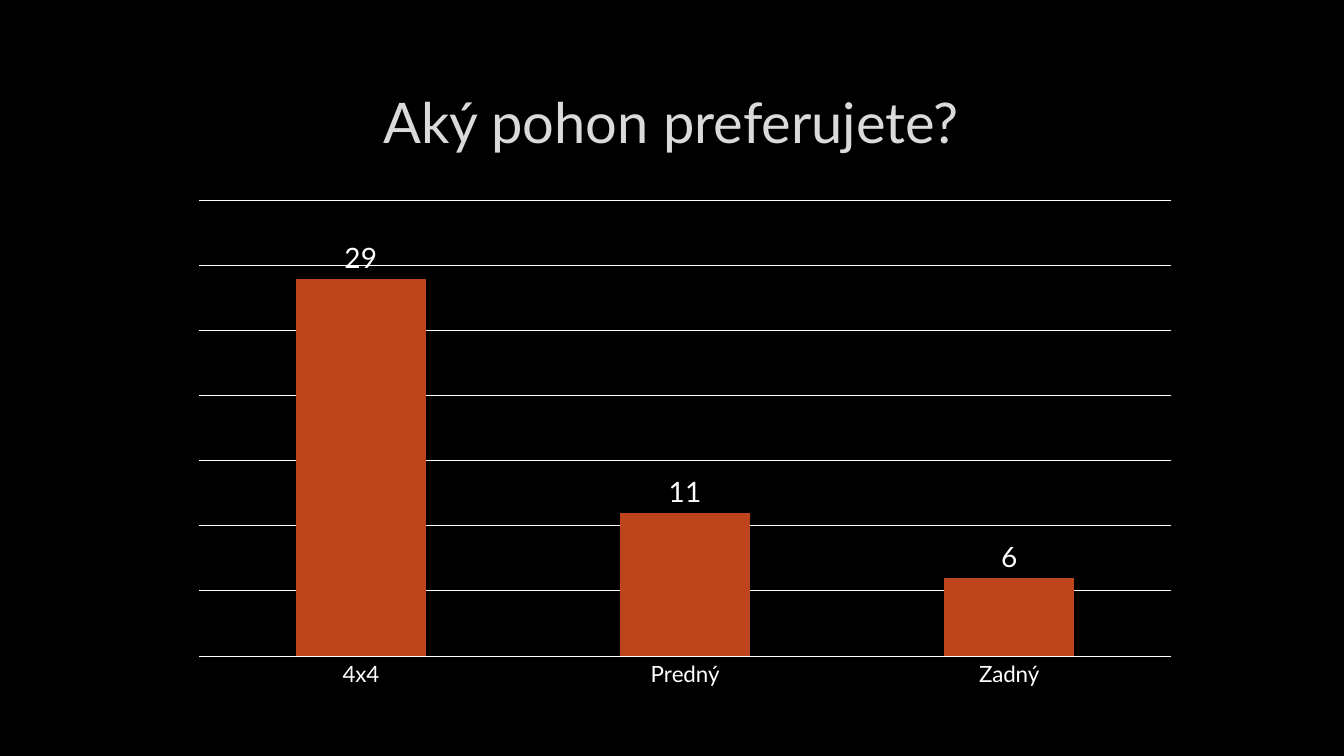
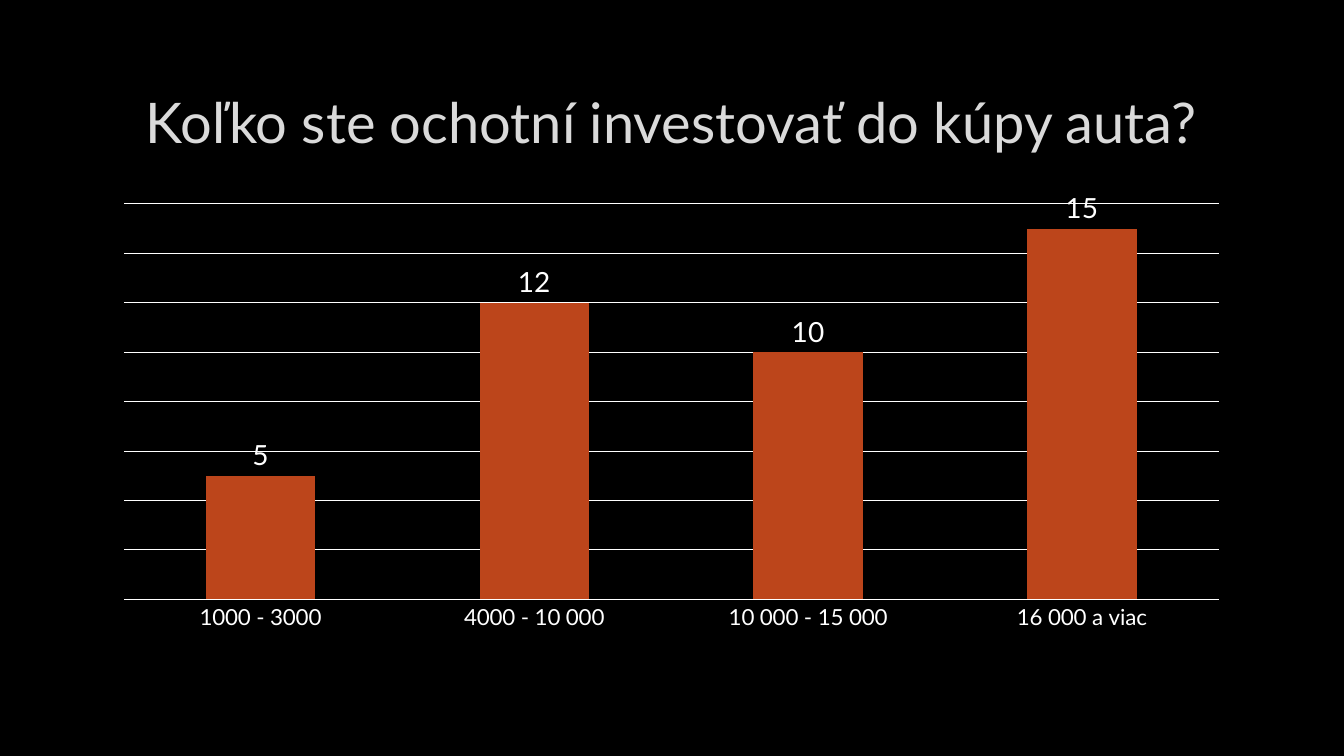
import pptx
import pptx.chart.data
import pptx.dml.color
import pptx.enum.chart
import pptx.enum.text
import pptx.util

Cm = pptx.util.Cm
Pt = pptx.util.Pt
RGBColor = pptx.dml.color.RGBColor

# Shared style
BLACK = RGBColor(0x00, 0x00, 0x00)
WHITE = RGBColor(0xFF, 0xFF, 0xFF)
SILVER = RGBColor(0xDA, 0xDA, 0xDA)
RUST = RGBColor(0xBC, 0x45, 0x1B)
FONT = "Lato"
MARGIN, CONTENT_WIDTH = 2.54, 28.75
TITLE_TOP, TITLE_HEIGHT = 1.7, 2.7
CHART_TOP = 4.8


def apply_format(target, values):
    for name, value in values.items():
        setattr(target, name, value)


class SurveyDeck:
    """Holds the deck style and the current page."""

    def __init__(self):
        self.deck = pptx.Presentation()
        apply_format(self.deck, {"slide_width": Cm(33.87), "slide_height": Cm(19.05)})
        self.page = None

    def add_page(self):
        self.page = self.deck.slides.add_slide(self.deck.slide_layouts[6])
        fill = self.page.background.fill
        fill.solid()
        fill.fore_color.rgb = BLACK

    def style_font(self, font, size, color):
        apply_format(font, {"name": FONT, "size": Pt(size)})
        font.color.rgb = color

    def add_title(self, text):
        box = self.page.shapes.add_textbox(
            Cm(MARGIN), Cm(TITLE_TOP), Cm(CONTENT_WIDTH), Cm(TITLE_HEIGHT))
        apply_format(box.text_frame, {
            "word_wrap": True,
            "vertical_anchor": pptx.enum.text.MSO_ANCHOR.MIDDLE})
        para = box.text_frame.paragraphs[0]
        para.alignment = pptx.enum.text.PP_ALIGN.CENTER
        span = para.add_run()
        span.text = text
        self.style_font(span.font, 40, SILVER)

    def add_columns(self, answers, left, width, height, top_value, step):
        data = pptx.chart.data.CategoryChartData()
        data.categories = list(answers)
        data.add_series("Series 1", list(answers.values()))
        chart = self.page.shapes.add_chart(
            pptx.enum.chart.XL_CHART_TYPE.COLUMN_CLUSTERED,
            Cm(left), Cm(CHART_TOP), Cm(width), Cm(height), data).chart
        apply_format(chart, {"has_title": False, "has_legend": False})
        self.style_font(chart.font, 10, WHITE)

        # Axes and gridlines
        no_tick = pptx.enum.chart.XL_TICK_MARK.NONE
        category_axis = chart.category_axis
        apply_format(category_axis, {"major_tick_mark": no_tick, "has_major_gridlines": False})
        category_axis.format.line.fill.background()
        self.style_font(category_axis.tick_labels.font, 16, WHITE)
        value_axis = chart.value_axis
        apply_format(value_axis, {
            "visible": False, "has_major_gridlines": True,
            "minimum_scale": 0, "maximum_scale": top_value, "major_unit": step})
        grid_line = value_axis.major_gridlines.format.line
        grid_line.width = Pt(0.75)
        grid_line.color.rgb = WHITE

        # Columns and their values
        plot = chart.plots[0]
        apply_format(plot, {
            "gap_width": 150, "vary_by_categories": False, "has_data_labels": True})
        column_fill = plot.series[0].format.fill
        column_fill.solid()
        column_fill.fore_color.rgb = RUST
        apply_format(plot.data_labels, {
            "show_value": True,
            "position": pptx.enum.chart.XL_LABEL_POSITION.OUTSIDE_END})
        self.style_font(plot.data_labels.font, 20, WHITE)


def main():
    survey = SurveyDeck()

    # Preferred drive
    survey.add_page()
    survey.add_title("Aký pohon preferujete?")
    survey.add_columns({"4x4": 29, "Predný": 11, "Zadný": 6},
                       left=4.5, width=25.53, height=12.75, top_value=35, step=5)

    # Budget for a car
    survey.add_page()
    survey.add_title("Koľko ste ochotní investovať do kúpy auta?")
    survey.add_columns({"1000 - 3000": 5, "4000 - 10 000": 12,
                        "10 000 - 15 000": 10, "16 000 a viac": 15},
                       left=MARGIN, width=CONTENT_WIDTH, height=11.28, top_value=16, step=2)

    survey.deck.save("out.pptx")


if __name__ == "__main__":
    main()
